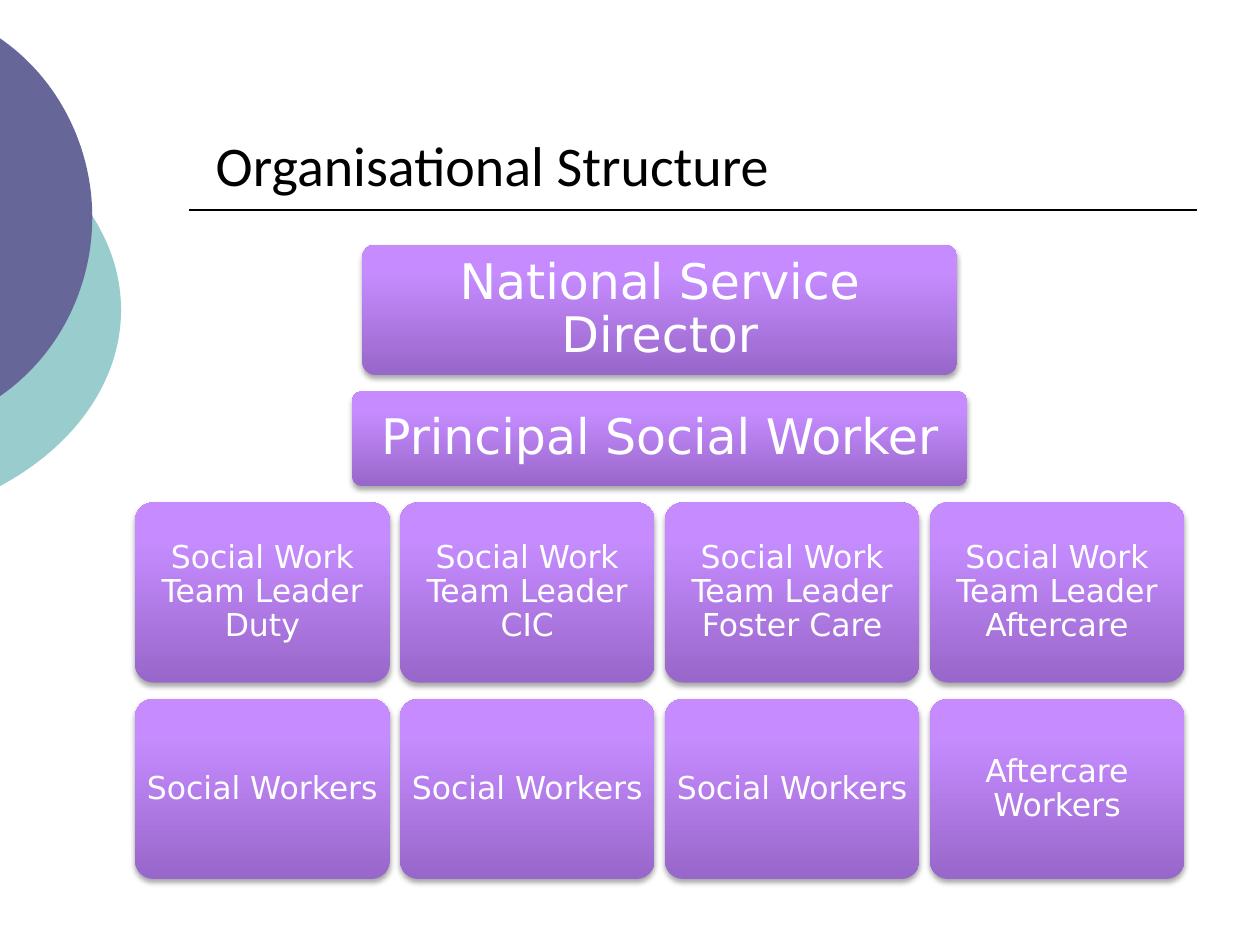
from copy import deepcopy
from dataclasses import dataclass

from lxml import etree
from pptx import Presentation
from pptx.dml.color import RGBColor
from pptx.enum.shapes import MSO_CONNECTOR, MSO_SHAPE
from pptx.enum.text import MSO_ANCHOR, MSO_AUTO_SIZE, PP_ALIGN
from pptx.oxml.ns import qn
from pptx.slide import Slide
from pptx.util import Cm, Pt

ROUNDED = MSO_SHAPE.ROUNDED_RECTANGLE
STRAIGHT = MSO_CONNECTOR.STRAIGHT
MIDDLE = MSO_ANCHOR.MIDDLE
CENTER = PP_ALIGN.CENTER
FIT_SHAPE = MSO_AUTO_SIZE.SHAPE_TO_FIT_TEXT

BLACK = RGBColor(0x00, 0x00, 0x00)
WHITE = RGBColor(0xFF, 0xFF, 0xFF)
TEAL = RGBColor(0x99, 0xCC, 0xCC)
INDIGO = RGBColor(0x66, 0x66, 0x99)
GRADIENT = (
    (0, RGBColor(0x98, 0x67, 0xCA)),
    (0.8, RGBColor(0xC6, 0x8C, 0xFF)),
    (1, RGBColor(0xC7, 0x8E, 0xFF)),
)

CHART_TOP = 4.93
CHART_CENTER = 13.3
COLUMN_STEP = 5.34
ROW_GAP = 0.33
CORNER = 0.1
CORNER_TEXT_INSET = 0.29 * CORNER

Point = tuple[float, float]


@dataclass(frozen=True)
class Level:
    roles: tuple[str, ...]
    width: float
    height: float
    font_size: int
    padding: float


@dataclass(frozen=True)
class Disc:
    left: float
    top: float
    width: float
    height: float
    upper_curve: tuple[Point, ...]
    color: RGBColor


LEVELS = (
    Level(("National Service Director",), 11.99, 2.63, 28, 0.3),
    Level(("Principal Social Worker",), 12.4, 1.91, 28, 0.3),
    Level(
        tuple(
            f"Social Work Team Leader {team}"
            for team in ("Duty", "CIC", "Foster Care", "Aftercare")
        ),
        5.13, 3.63, 18, 0.18,
    ),
    Level(("Social Workers",) * 3 + ("Aftercare Workers",), 5.13, 3.63, 18, 0.18),
)

DISCS = (
    Disc(
        -8.99, 1.9, 11.43, 8.69,
        ((-0.02, 2.69), (1.52, 3.51), (2.44, 4.83), (2.44, 6.25)), TEAL,
    ),
    Disc(
        -6.73, 0, 8.59, 8.76,
        ((-0.02, 0.76), (1.17, 1.57), (1.86, 2.95), (1.86, 4.38)), INDIGO,
    ),
)


def draw_disc(slide: Slide, disc: Disc) -> None:
    right, bottom = disc.left + disc.width, disc.top + disc.height
    builder = slide.shapes.build_freeform(Cm(disc.left), Cm(disc.top))
    corners = ((right, disc.top), (right, bottom), (disc.left, bottom))
    builder.add_line_segments([(Cm(x), Cm(y)) for x, y in corners], close=True)
    segment = builder.convert_to_shape()
    segment.shadow.inherit = False
    segment.fill.solid()
    segment.fill.fore_color.rgb = disc.color
    segment.line.fill.background()

    outline = next(segment._element.iter(qn("a:path")))
    for command in list(outline):
        outline.remove(command)

    def add_command(tag: str, points: tuple[Point, ...] = ()) -> None:
        command = etree.SubElement(outline, qn(tag))
        for x, y in points:
            etree.SubElement(
                command, qn("a:pt"),
                x=str(Cm(x - disc.left)), y=str(Cm(y - disc.top)),
            )

    middle = disc.upper_curve[-1][1]
    lower_curve = tuple((x, 2 * middle - y) for x, y in reversed(disc.upper_curve))
    add_command("a:moveTo", disc.upper_curve[:1])
    for curve in (disc.upper_curve, lower_curve):
        add_command("a:cubicBezTo", curve[1:])
    add_command("a:close")


def draw_heading(slide: Slide) -> None:
    rule = slide.shapes.add_connector(STRAIGHT, Cm(3.81), Cm(4.24), Cm(24.13), Cm(4.24))
    rule.line.color.rgb = BLACK
    rule.line.width = Pt(1)
    etree.SubElement(rule._element.spPr, qn("a:effectLst"))

    heading = slide.shapes.add_textbox(Cm(4.1), Cm(2.5), Cm(11.79), Cm(1.63))
    frame = heading.text_frame
    frame.word_wrap = False
    frame.auto_size = FIT_SHAPE
    frame.text = "Organisational Structure"
    font = frame.paragraphs[0].runs[0].font
    font.name = "Calibri"
    font.size = Pt(32)
    font.color.rgb = BLACK


def draw_role(slide: Slide, role: str, level: Level, left: float, top: float) -> None:
    box = slide.shapes.add_shape(
        ROUNDED, Cm(left), Cm(top), Cm(level.width), Cm(level.height)
    )
    box.adjustments[0] = CORNER
    box.line.fill.background()

    box.fill.gradient()
    box.fill.gradient_angle = 90
    stop_list = box._element.spPr.find(qn("a:gradFill")).find(qn("a:gsLst"))
    stop_list.append(deepcopy(stop_list[0]))
    for stop, (position, color) in zip(box.fill.gradient_stops, GRADIENT):
        stop.position = position
        stop.color.rgb = color

    box.shadow.inherit = False
    effects = box._element.spPr.find(qn("a:effectLst"))
    shadow = etree.SubElement(
        effects, qn("a:outerShdw"),
        blurRad=str(Pt(3.1)), dist=str(Pt(1.8)), dir="5400000", rotWithShape="0",
    )
    shade = etree.SubElement(shadow, qn("a:srgbClr"), val=str(BLACK))
    etree.SubElement(shade, qn("a:alpha"), val="35000")

    frame = box.text_frame
    frame.word_wrap = True
    frame.vertical_anchor = MIDDLE
    margin = Cm(level.padding - CORNER_TEXT_INSET * min(level.width, level.height))
    frame.margin_left = frame.margin_right = margin
    frame.margin_top = frame.margin_bottom = margin
    frame.text = role
    paragraph = frame.paragraphs[0]
    paragraph.alignment = CENTER
    paragraph.line_spacing = 0.9
    font = paragraph.runs[0].font
    font.name = "DejaVu Sans"
    font.size = Pt(level.font_size)
    font.color.rgb = WHITE


def draw_levels(slide: Slide) -> None:
    top = CHART_TOP
    for level in LEVELS:
        span = (len(level.roles) - 1) * COLUMN_STEP + level.width
        for column, role in enumerate(level.roles):
            left = CHART_CENTER - span / 2 + column * COLUMN_STEP
            draw_role(slide, role, level, left, top)
        top += level.height + ROW_GAP


def main() -> None:
    deck = Presentation()
    deck.slide_width = Cm(25.4)
    deck.slide_height = Cm(19.05)
    slide = deck.slides.add_slide(deck.slide_layouts[6])
    for disc in DISCS:
        draw_disc(slide, disc)
    draw_heading(slide)
    draw_levels(slide)
    deck.save("out.pptx")


if __name__ == "__main__":
    main()
